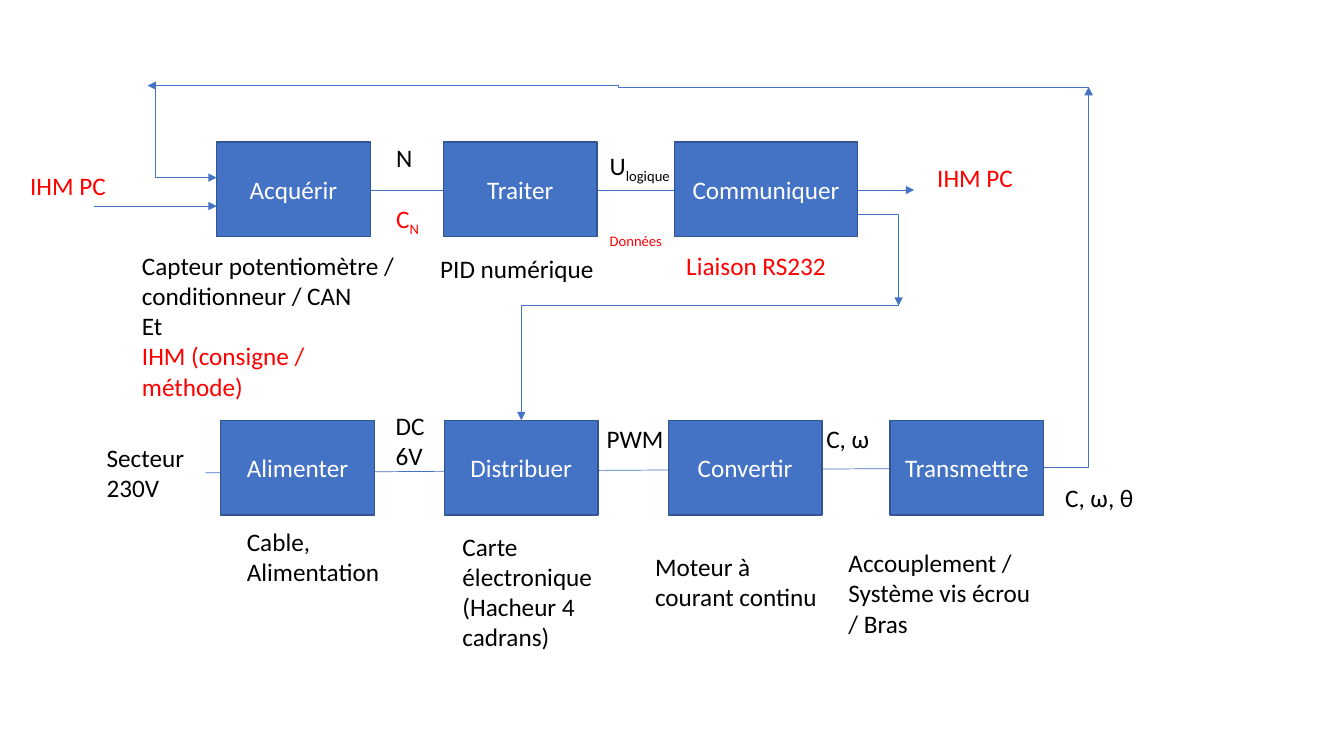
import pptx
import pptx.util
import pptx.dml.color
import pptx.enum.shapes
import pptx.enum.text
import pptx.oxml.ns
import lxml.etree

Pt = pptx.util.Pt

# Theme: colours, type and line weights
THEME = {
    "font": "Calibri", "size": 18, "subscript": "-25000",
    "black": "000000", "red": "FF0000", "white": "FFFFFF",
    "fill": "4472C4", "outline": "325491",
    "outline_width": 1, "arrow_width": 0.5, "blank_line": 22,
}
SLIDE_SIZE = (960, 540)

# Function blocks by row: top, then (name, left, width)
BLOCK_HEIGHT = 67.7
BLOCK_ROWS = [
    (101.5, [("Acquérir", 154.8, 109.7), ("Traiter", 316.8, 109.7),
             ("Communiquer", 481.7, 131)]),
    (300.2, [("Alimenter", 157.7, 109.7), ("Distribuer", 317.5, 109.7),
             ("Convertir", 477.4, 109.7), ("Transmettre", 635.8, 109.7)]),
]

# Labels: left, top, width, height, paragraphs of (colour, text, subscript)
LABELS = [
    # Technical solutions below the blocks
    (94.3, 175, 195.8, 138, [
        ("black", "Capteur potentiomètre / conditionneur / CAN", ""),
        ("black", "Et", ""), ("red", "IHM (consigne / méthode)", "")]),
    (307.4, 177.1, 129.6, 29, [("black", "PID numérique", "")]),
    (483.1, 175, 129.6, 29, [("red", "Liaison RS232", "")]),
    (169.2, 372.2, 109.4, 51, [("black", "Cable,", ""), ("black", "Alimentation", "")]),
    (323.3, 375.8, 146.9, 94.5, [("black", "Carte électronique (Hacheur 4 cadrans)", "")]),
    (460.8, 390.2, 131, 51, [("black", "Moteur à courant continu", "")]),
    (599, 387.4, 146.9, 72.7, [("black", "Accouplement / Système vis écrou / Bras", "")]),
    # Flows between the blocks
    (14.4, 118.1, 129.6, 29, [("red", "IHM PC", "")]),
    (662.4, 112.3, 129.6, 29, [("red", "IHM PC", "")]),
    (69.1, 312.5, 109.4, 51, [("black", "Secteur 230V", "")]),
    (275.5, 289.2, 109.4, 51, [("black", "DC", ""), ("black", "6V", "")]),
    (426.2, 298.8, 109.4, 29, [("black", "PWM", "")]),
    (583.2, 298.8, 109.4, 29, [("black", "C, ω", "")]),
    (753.8, 340.6, 109.4, 29, [("black", "C, ω, θ", "")]),
]
# Paired flows, kept one line apart
PAIRED_LABELS = [
    (275.8, 97.9, 109.4, 72.7, [("black", "N", ""), ("red", "C", "N")]),
    (428.4, 103.7, 109.4, 65.5, [("black", "U", "logique"), ("red", "", "Données")]),
]

# Arrows: start, end
ROW_ARROWS = [
    ((146.9, 337.7), (745.2, 334.1)),
    ((264.2, 135.7), (653, 135.7)),
]
INPUT_ARROW = ((67, 147.2), (154.8, 147.2))
# Elbow arrows: preset, position of the bend, start, end
ELBOW_ARROWS = [
    ("bentConnector2", None, (745.2, 334.1), (777.6, 62.2)),
    ("bentConnector3", 50000, (777.6, 62.2), (105.5, 61.2)),
    ("bentConnector3", 0, (110.9, 61.2), (154.8, 126.9)),
    ("bentConnector2", None, (641.9, 218.4), (372.4, 300.2)),
    ("bentConnector2", None, (612.7, 152.8), (641.9, 218.4)),
]


def colour(name):
    return pptx.dml.color.RGBColor.from_string(THEME[name])


def style_paragraph(paragraph, colour_name):
    paragraph.font.name = THEME["font"]
    paragraph.font.size = Pt(THEME["size"])
    paragraph.font.color.rgb = colour(colour_name)


def add_block(slide, name, left, top, width):
    shape = slide.shapes.add_shape(
        pptx.enum.shapes.MSO_SHAPE.RECTANGLE,
        Pt(left), Pt(top), Pt(width), Pt(BLOCK_HEIGHT))
    shape.shadow.inherit = False
    shape.fill.solid()
    shape.fill.fore_color.rgb = colour("fill")
    shape.line.color.rgb = colour("outline")
    shape.line.width = Pt(THEME["outline_width"])
    shape.text_frame.vertical_anchor = pptx.enum.text.MSO_ANCHOR.MIDDLE
    paragraph = shape.text_frame.paragraphs[0]
    paragraph.text = name
    paragraph.alignment = pptx.enum.text.PP_ALIGN.CENTER
    style_paragraph(paragraph, "white")


def add_label(slide, left, top, width, height, paragraphs, gap=0):
    shape = slide.shapes.add_textbox(Pt(left), Pt(top), Pt(width), Pt(height))
    frame = shape.text_frame
    frame.word_wrap = True
    frame.auto_size = pptx.enum.text.MSO_AUTO_SIZE.SHAPE_TO_FIT_TEXT
    for index, (colour_name, text, subscript) in enumerate(paragraphs):
        paragraph = frame.add_paragraph() if index else frame.paragraphs[0]
        if index and gap:
            paragraph.space_before = Pt(gap)
        style_paragraph(paragraph, colour_name)
        if text:
            paragraph.add_run().text = text
        if subscript:
            run = paragraph.add_run()
            run.text = subscript
            run._r.get_or_add_rPr().set("baseline", THEME["subscript"])


def add_arrow(slide, start, end, preset="line", bend=None):
    connector = slide.shapes.add_connector(
        pptx.enum.shapes.MSO_CONNECTOR.STRAIGHT,
        *(Pt(value) for value in start + end))
    connector.line.color.rgb = colour("fill")
    connector.line.width = Pt(THEME["arrow_width"])
    qn = pptx.oxml.ns.qn
    properties = connector._element.spPr
    lxml.etree.SubElement(properties.find(qn("a:ln")), qn("a:tailEnd"), type="triangle")
    lxml.etree.SubElement(properties, qn("a:effectLst"))
    geometry = properties.find(qn("a:prstGeom"))
    geometry.set("prst", preset)
    if bend is not None:
        lxml.etree.SubElement(geometry.find(qn("a:avLst")), qn("a:gd"),
                              name="adj1", fmla=f"val {bend}")


def main():
    presentation = pptx.Presentation()
    presentation.slide_width, presentation.slide_height = map(Pt, SLIDE_SIZE)
    slide = presentation.slides.add_slide(presentation.slide_layouts[6])

    # Row arrows run behind the blocks
    for start, end in ROW_ARROWS:
        add_arrow(slide, start, end)
    for top, blocks in BLOCK_ROWS:
        for name, left, width in blocks:
            add_block(slide, name, left, top, width)

    # Input and feedback arrows
    add_arrow(slide, *INPUT_ARROW)
    for preset, bend, start, end in ELBOW_ARROWS:
        add_arrow(slide, start, end, preset, bend)

    # Labels
    for label in LABELS:
        add_label(slide, *label)
    for label in PAIRED_LABELS:
        add_label(slide, *label, gap=THEME["blank_line"])

    presentation.save("out.pptx")


if __name__ == "__main__":
    main()
